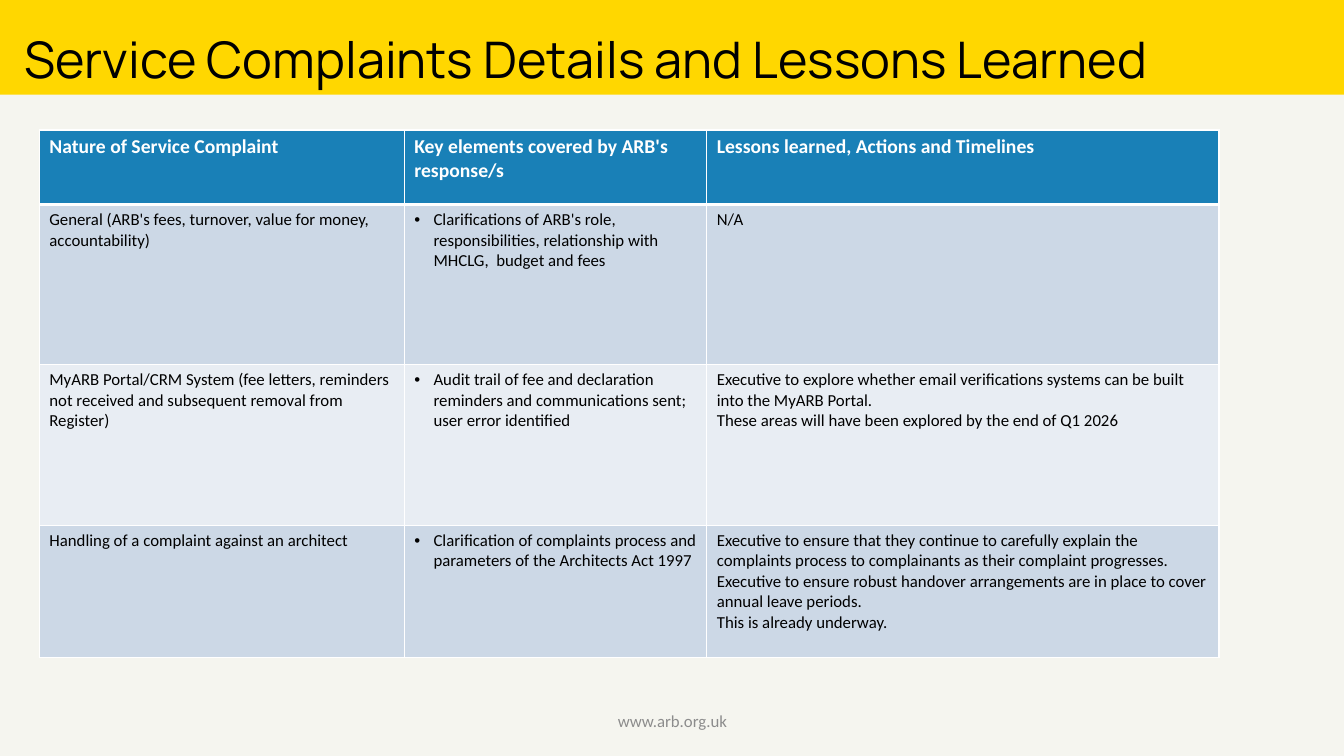
from lxml import etree
from pptx import Presentation
from pptx.dml.color import RGBColor
from pptx.enum.shapes import MSO_SHAPE
from pptx.enum.text import MSO_ANCHOR, PP_ALIGN
from pptx.oxml.ns import qn
from pptx.util import Inches, Pt

RECTANGLE = MSO_SHAPE.RECTANGLE
BOTTOM, MIDDLE = MSO_ANCHOR.BOTTOM, MSO_ANCHOR.MIDDLE
LEFT, CENTER = PP_ALIGN.LEFT, PP_ALIGN.CENTER

BLACK, WHITE, GREY = "000000", "FFFFFF", "8C8C8C"
YELLOW, PAPER, BLUE = "FFD700", "F5F5EF", "1980B7"
BANDS = ["CCD8E6", "E8EDF3"]

COLUMN_WIDTHS = [3.62, 3, 5.08]
ROW_HEIGHTS = [0.74, 1.59, 1.59, 1.31]
BULLET_COLUMN = 1
COMPLAINTS = [
    ["Nature of Service Complaint",
     "Key elements covered by ARB's response/s",
     "Lessons learned, Actions and Timelines"],
    ["General (ARB's fees, turnover, value for money, accountability)",
     "Clarifications of ARB's role, responsibilities, relationship with "
     "MHCLG,  budget and fees",
     "N/A"],
    ["MyARB Portal/CRM System (fee letters, reminders not received and "
     "subsequent removal from Register)",
     "Audit trail of fee and declaration reminders and communications sent; "
     "user error identified",
     "Executive to explore whether email verifications systems can be built "
     "into the MyARB Portal.\n"
     "These areas will have been explored by the end of Q1 2026"],
    ["Handling of a complaint against an architect",
     "Clarification of complaints process and parameters of the Architects "
     "Act 1997",
     "Executive to ensure that they continue to carefully explain the "
     "complaints process to complainants as their complaint progresses. "
     "Executive to ensure robust handover arrangements are in place to cover "
     "annual leave periods.\n"
     "This is already underway."],
]


def rgb(value):
    return RGBColor.from_string(value)


def style_text(tf, size, color, font="Calibri", bold=False, align=LEFT):
    for p in tf.paragraphs:
        p.alignment = align
        for r in p.runs:
            r.font.name = font
            r.font.size = Pt(size)
            r.font.bold = bold
            r.font.color.rgb = rgb(color)


def add_bullet(p):
    pPr = p._p.get_or_add_pPr()
    pPr.set("marL", str(Inches(0.19)))
    pPr.set("indent", str(-Inches(0.19)))
    etree.SubElement(pPr, qn("a:buFont"), typeface="Arial")
    etree.SubElement(pPr, qn("a:buChar"), char="•")


def set_borders(cell, color, top=1, bottom=1):
    tcPr = cell._tc.get_or_add_tcPr()
    for side, width in [("L", 1), ("R", 1), ("T", top), ("B", bottom)]:
        ln = etree.SubElement(tcPr, qn(f"a:ln{side}"), w=str(Pt(width)))
        fill = etree.SubElement(ln, qn("a:solidFill"))
        etree.SubElement(fill, qn("a:srgbClr"), val=color)


def add_title_band(slide, x, y, w, h):
    s = slide.shapes.add_shape(RECTANGLE, Inches(x), Inches(y), Inches(w), Inches(h))
    s.shadow.inherit = False
    s.fill.solid()
    s.fill.fore_color.rgb = rgb(YELLOW)
    s.line.fill.background()
    tf = s.text_frame
    tf.word_wrap = True
    tf.vertical_anchor = BOTTOM
    tf.margin_left = Inches(0.24)
    tf.text = "Service Complaints Details and Lessons Learned"
    tf.paragraphs[0].line_spacing = 0.9
    style_text(tf, 36, BLACK, font="Manrope")


def add_complaints_table(slide, x, y):
    frame = slide.shapes.add_table(
        len(ROW_HEIGHTS), len(COLUMN_WIDTHS), Inches(x), Inches(y),
        Inches(sum(COLUMN_WIDTHS)), Inches(sum(ROW_HEIGHTS)))
    table = frame.table
    for column, width in zip(table.columns, COLUMN_WIDTHS):
        column.width = Inches(width)
    for row, height in zip(table.rows, ROW_HEIGHTS):
        row.height = Inches(height)

    for i, texts in enumerate(COMPLAINTS):
        header = i == 0
        for j, text in enumerate(texts):
            cell = table.cell(i, j)
            # A thick rule separates the header from the body
            set_borders(cell, WHITE, top=3 if i == 1 else 1, bottom=3 if header else 1)
            cell.fill.solid()
            cell.fill.fore_color.rgb = rgb(BLUE if header else BANDS[(i - 1) % 2])
            tf = cell.text_frame
            tf.text = text
            if j == BULLET_COLUMN and not header:
                add_bullet(tf.paragraphs[0])
            style_text(tf, 14 if header else 12, WHITE if header else BLACK, bold=header)


def add_footer(slide, x, y, w, h):
    tf = slide.shapes.add_textbox(Inches(x), Inches(y), Inches(w), Inches(h)).text_frame
    tf.word_wrap = True
    tf.vertical_anchor = MIDDLE
    tf.text = "www.arb.org.uk"
    style_text(tf, 12, GREY, align=CENTER)


def main():
    prs = Presentation()
    prs.slide_width, prs.slide_height = Inches(13.33), Inches(7.5)
    slide = prs.slides.add_slide(prs.slide_layouts[6])
    slide.background.fill.solid()
    slide.background.fill.fore_color.rgb = rgb(PAPER)

    add_title_band(slide, 0, 0, 13.33, 0.94)
    add_footer(slide, 4.42, 6.95, 4.5, 0.4)
    add_complaints_table(slide, 0.39, 1.29)
    prs.save("out.pptx")


if __name__ == "__main__":
    main()
